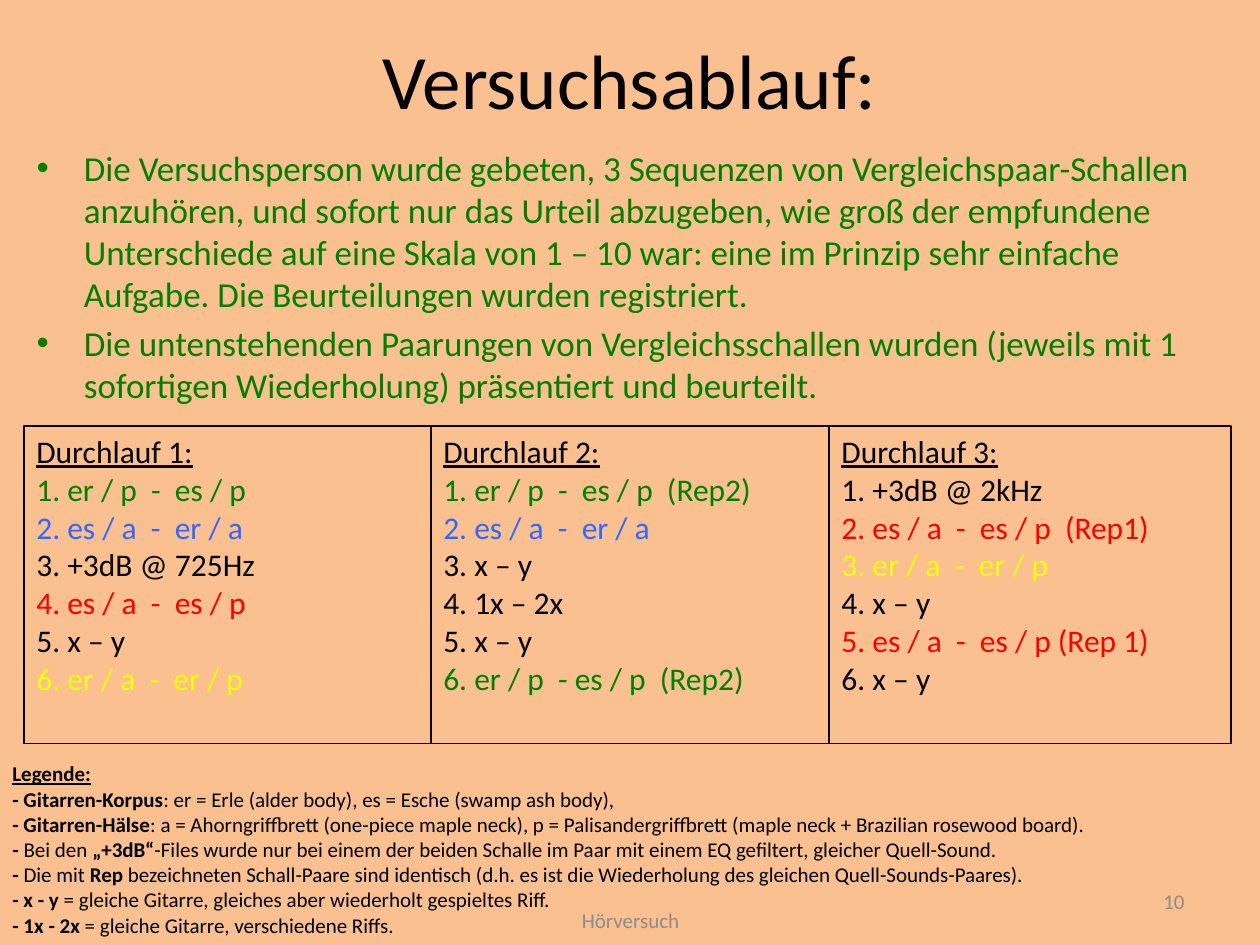
from dataclasses import dataclass
from itertools import cycle, pairwise

from pptx import Presentation
from pptx.dml.color import RGBColor
from pptx.enum.shapes import MSO_SHAPE as Shape
from pptx.enum.text import MSO_ANCHOR as Anchor, MSO_AUTO_SIZE as AutoSize, PP_ALIGN as Align
from pptx.util import Inches, Pt


@dataclass(frozen=True)
class Theme:
    """Colours and type sizes of the slide."""
    font: str = "Calibri"
    background: str = "FAC090"
    black: str = "000000"
    green: str = "008000"
    blue: str = "3366FF"
    red: str = "FF0000"
    yellow: str = "FFFF00"
    grey: str = "8C8C8C"
    title: int = 44
    body: int = 20
    run: int = 18
    small: int = 12


THEME = Theme()

BULLETS = [
    "Die Versuchsperson wurde gebeten, 3 Sequenzen von Vergleichspaar-Schallen anzuhören, "
    "und sofort nur das Urteil abzugeben, wie groß der empfundene Unterschiede auf eine Skala "
    "von 1 – 10 war: eine im Prinzip sehr einfache Aufgabe. Die Beurteilungen wurden registriert.",
    "Die untenstehenden Paarungen von Vergleichsschallen wurden (jeweils mit 1 sofortigen "
    "Wiederholung) präsentiert und beurteilt.",
]

COLUMN_EDGES = [0.19, 3.42, 6.58, 9.77]
TRIALS = [
    [("er / p  -  es / p", THEME.green), ("es / a  -  er / a", THEME.blue),
     ("+3dB @ 725Hz", THEME.black), ("es / a  -  es / p", THEME.red),
     ("x – y", THEME.black), ("er / a  -  er / p", THEME.yellow)],
    [("er / p  -  es / p  (Rep2)", THEME.green), ("es / a  -  er / a", THEME.blue),
     ("x – y", THEME.black), ("1x – 2x", THEME.black),
     ("x – y", THEME.black), ("er / p  - es / p  (Rep2)", THEME.green)],
    [("+3dB @ 2kHz", THEME.black), ("es / a  -  es / p  (Rep1)", THEME.red),
     ("er / a  -  er / p", THEME.yellow), ("x – y", THEME.black),
     ("es / a  -  es / p (Rep 1)", THEME.red), ("x – y", THEME.black)],
]

LEGEND = [
    ("- Gitarren-Korpus", ": er = Erle (alder body), es = Esche (swamp ash body),"),
    ("- Gitarren-Hälse", ": a = Ahorngriffbrett (one-piece maple neck), "
     "p = Palisandergriffbrett (maple neck + Brazilian rosewood board)."),
    ("-", " Bei den ", "„+3dB“", "-Files wurde nur bei einem der beiden Schalle im Paar "
     "mit einem EQ gefiltert, gleicher Quell-Sound."),
    ("-", " Die mit ", "Rep", " bezeichneten Schall-Paare sind identisch "
     "(d.h. es ist die Wiederholung des gleichen Quell-Sounds-Paares)."),
    ("- x - y", " = gleiche Gitarre, gleiches aber wiederholt gespieltes Riff."),
    ("- 1x - 2x", " = gleiche Gitarre, verschiedene Riffs."),
]


class SlideBuilder:
    """Holds the theme and the current slide and adds each kind of element."""

    def __init__(self, presentation, theme):
        self.theme = theme
        self.slide = presentation.slides.add_slide(presentation.slide_layouts[1])
        fill = self.slide.background.fill
        fill.solid()
        fill.fore_color.rgb = RGBColor.from_string(theme.background)

    def add_text(self, paragraph, text, size, color, **formats):
        """Add one formatted run."""
        run = paragraph.add_run()
        run.text = text
        run.font.color.rgb = RGBColor.from_string(color)
        for name, value in {"name": self.theme.font, "size": Pt(size), **formats}.items():
            setattr(run.font, name, value)

    def add_lines(self, paragraph, lines, size):
        """Add lines of (text, colour, bold) runs, parted by line breaks."""
        for index, line in enumerate(lines):
            if index:
                paragraph.add_line_break()
            for text, color, bold in line:
                self.add_text(paragraph, text, size, color, bold=bold)

    def frame(self, shape, anchor=Anchor.TOP):
        """Set up wrapping and anchoring and return the text frame."""
        settings = {"word_wrap": True, "auto_size": AutoSize.NONE, "vertical_anchor": anchor}
        for name, value in settings.items():
            setattr(shape.text_frame, name, value)
        return shape.text_frame

    def placeholder(self, index, bounds, texts, size, color, anchor=Anchor.TOP):
        """Move and fill a template placeholder, one paragraph per text."""
        shape = self.slide.placeholders[index]
        for name, value in zip(("left", "top", "width", "height"), bounds):
            setattr(shape, name, Inches(value))
        frame = self.frame(shape, anchor)
        for number, text in enumerate(texts):
            paragraph = frame.add_paragraph() if number else frame.paragraphs[0]
            self.add_text(paragraph, text, size, color)

    def textbox(self, bounds, anchor=Anchor.TOP):
        """Add an empty text box and return its text frame."""
        return self.frame(self.slide.shapes.add_textbox(*map(Inches, bounds)), anchor)

    def footer(self, bounds, text, alignment):
        """Add a small grey footer text."""
        paragraph = self.textbox(bounds, Anchor.MIDDLE).paragraphs[0]
        paragraph.alignment = alignment
        self.add_text(paragraph, text, self.theme.small, self.theme.grey)

    def section(self, frame, heading, lines, size, bold=False):
        """Add an underlined heading and the lines below it."""
        self.add_text(frame.paragraphs[0], heading, size, self.theme.black,
                      underline=True, bold=bold)
        self.add_lines(frame.add_paragraph(), lines, size)
        for paragraph in frame.paragraphs:
            paragraph.alignment = Align.LEFT

    def run_box(self, bounds, heading, trials):
        """Add an outlined box with the numbered trials of one run."""
        shape = self.slide.shapes.add_shape(Shape.RECTANGLE, *map(Inches, bounds))
        shape.shadow.inherit = False
        shape.fill.background()
        shape.line.color.rgb = RGBColor.from_string(self.theme.black)
        shape.line.width = Pt(0.75)
        lines = [[(f"{number}. {text}", color, False)]
                 for number, (text, color) in enumerate(trials, 1)]
        self.section(self.frame(shape), heading, lines, self.theme.run)

    def legend(self, bounds, heading, entries):
        """Add the legend, whose pieces alternate between bold and plain."""
        lines = [[(text, self.theme.black, bold) for text, bold in zip(entry, cycle((True, False)))]
                 for entry in entries]
        self.section(self.textbox(bounds), heading, lines, self.theme.small, bold=True)


def main():
    """Build and save the slide."""
    presentation = Presentation()
    presentation.slide_width, presentation.slide_height = Inches(10), Inches(7.5)
    builder = SlideBuilder(presentation, THEME)
    builder.legend((0, 5.99, 9.77, 1.51), "Legende:", LEGEND)
    builder.placeholder(0, (0.5, 0, 9, 1.25), ["Versuchsablauf:"],
                        THEME.title, THEME.black, Anchor.MIDDLE)
    builder.placeholder(1, (0.19, 1.11, 9.58, 2.05), BULLETS, THEME.body, THEME.green)
    builder.footer((3.42, 7.1, 3.17, 0.4), "Hörversuch", Align.CENTER)
    builder.footer((7.17, 6.95, 2.33, 0.4), "10", Align.RIGHT)
    for number, ((left, right), trials) in enumerate(zip(pairwise(COLUMN_EDGES), TRIALS), 1):
        builder.run_box((left, 3.38, right - left, 2.52), f"Durchlauf {number}:", trials)
    presentation.save("out.pptx")


if __name__ == "__main__":
    main()
